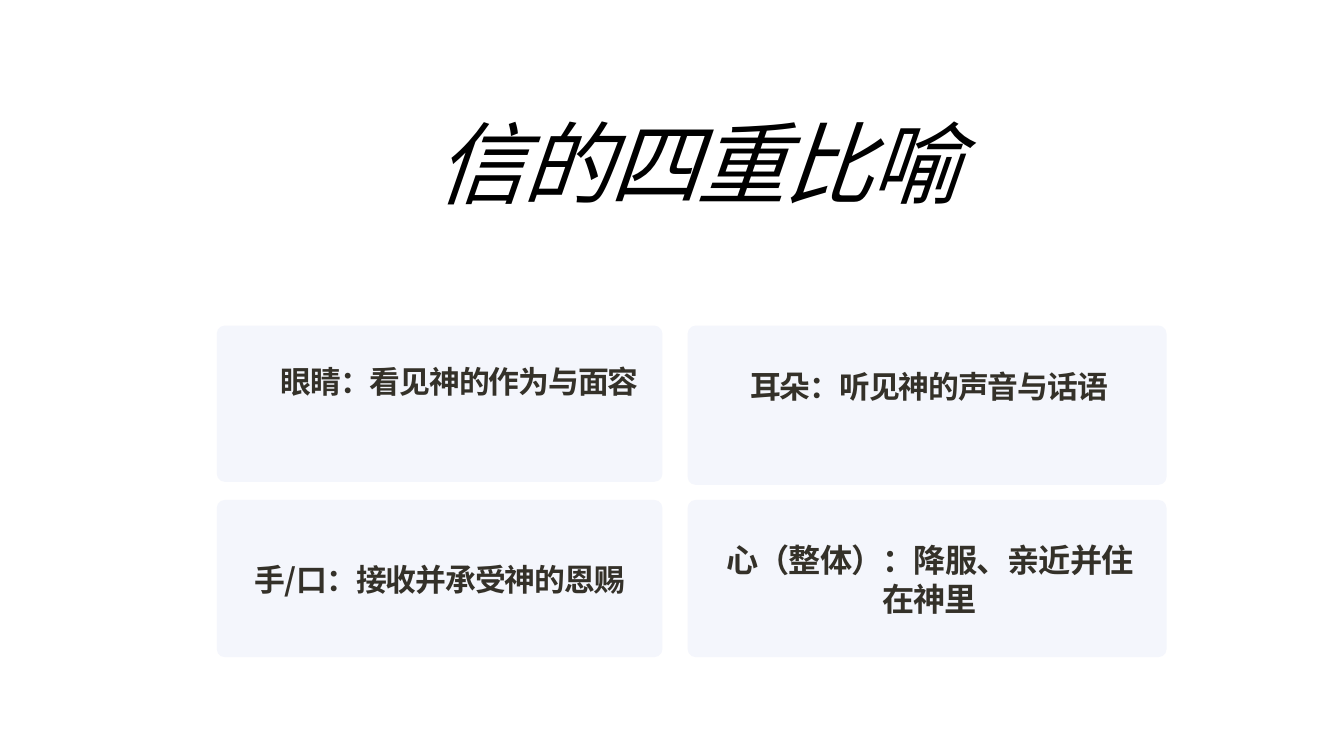
from lxml import etree
from pptx import Presentation
from pptx.dml.color import RGBColor
from pptx.enum.shapes import MSO_SHAPE
from pptx.enum.text import MSO_ANCHOR, MSO_AUTO_SIZE, PP_ALIGN
from pptx.oxml.ns import qn
from pptx.util import Inches, Pt

ROUNDED = MSO_SHAPE.ROUNDED_RECTANGLE
TOP = MSO_ANCHOR.TOP
FIT_SHAPE = MSO_AUTO_SIZE.SHAPE_TO_FIT_TEXT
CENTER = PP_ALIGN.CENTER

FONT = "Noto Sans CJK SC"
CARD_FILL = RGBColor(0xF4, 0xF6, 0xFC)
CARD_TEXT = RGBColor(0x34, 0x31, 0x29)
TITLE_TEXT = RGBColor(0x00, 0x00, 0x00)
CORNER_RADIUS = 0.08


def write_centered(frame, text, size, line_height, color, spacing):
    """Fill a frame with one centred line of tracked text."""
    frame.word_wrap = True
    frame.auto_size = FIT_SHAPE
    frame.vertical_anchor = TOP
    frame.margin_left = frame.margin_right = 0
    frame.margin_top = frame.margin_bottom = 0
    frame.text = text
    paragraph = frame.paragraphs[0]
    paragraph.alignment = CENTER
    paragraph.line_spacing = Pt(line_height)
    run = paragraph.runs[0]
    run.font.name = FONT
    run.font.size = Pt(size)
    run.font.color.rgb = color
    # East Asian typeface and letter spacing
    properties = run.font._element
    properties.set("spc", str(round(spacing * 100)))
    etree.SubElement(properties, qn("a:ea")).set("typeface", FONT)
    return paragraph


prs = Presentation()
prs.slide_width = Inches(13.33)
prs.slide_height = Inches(7.5)
slide = prs.slides.add_slide(prs.slide_layouts[5])

# Title
title = slide.shapes.title
title.left, title.top = Inches(1.89), Inches(1.35)
title.width, title.height = Inches(9.56), Inches(0.94)
heading = write_centered(title.text_frame, "信的四重比喻", 64, 57, TITLE_TEXT, -1.9)
heading.runs[0].font.italic = True
heading.level = 1
heading_properties = heading._p.get_or_add_pPr()
heading_properties.set("marL", str(Inches(0.5)))
heading_properties.set("indent", "0")

# Four metaphors: card box, caption box, caption, text size, line height
metaphors = [
    ((2.15, 3.23, 4.42, 1.55), (2.65, 3.59, 3.82, 0.75), "眼睛：看见神的作为与面容", 22, 27),
    ((6.82, 3.23, 4.75, 1.58), (7.33, 3.64, 3.77, 0.75), "耳朵：听见神的声音与话语", 22, 27),
    ((2.15, 4.96, 4.42, 1.56), (2.45, 5.55, 3.82, 0.4), "手/口：接收并承受神的恩赐", 22, 27),
    ((6.82, 4.96, 4.75, 1.56), (7.09, 5.35, 4.26, 0.81), "心（整体）：降服、亲近并住在神里", 23, 28),
]
for card_box, caption_box, text, size, line_height in metaphors:
    card = slide.shapes.add_shape(ROUNDED, *map(Inches, card_box))
    card.adjustments[0] = CORNER_RADIUS / card_box[3]
    card.fill.solid()
    card.fill.fore_color.rgb = CARD_FILL
    card.line.fill.background()
    card.shadow.inherit = False

    caption = slide.shapes.add_textbox(*map(Inches, caption_box))
    line = write_centered(caption.text_frame, text, size, line_height, CARD_TEXT, -0.7)
    line.runs[0].font.bold = True

prs.save("out.pptx")
